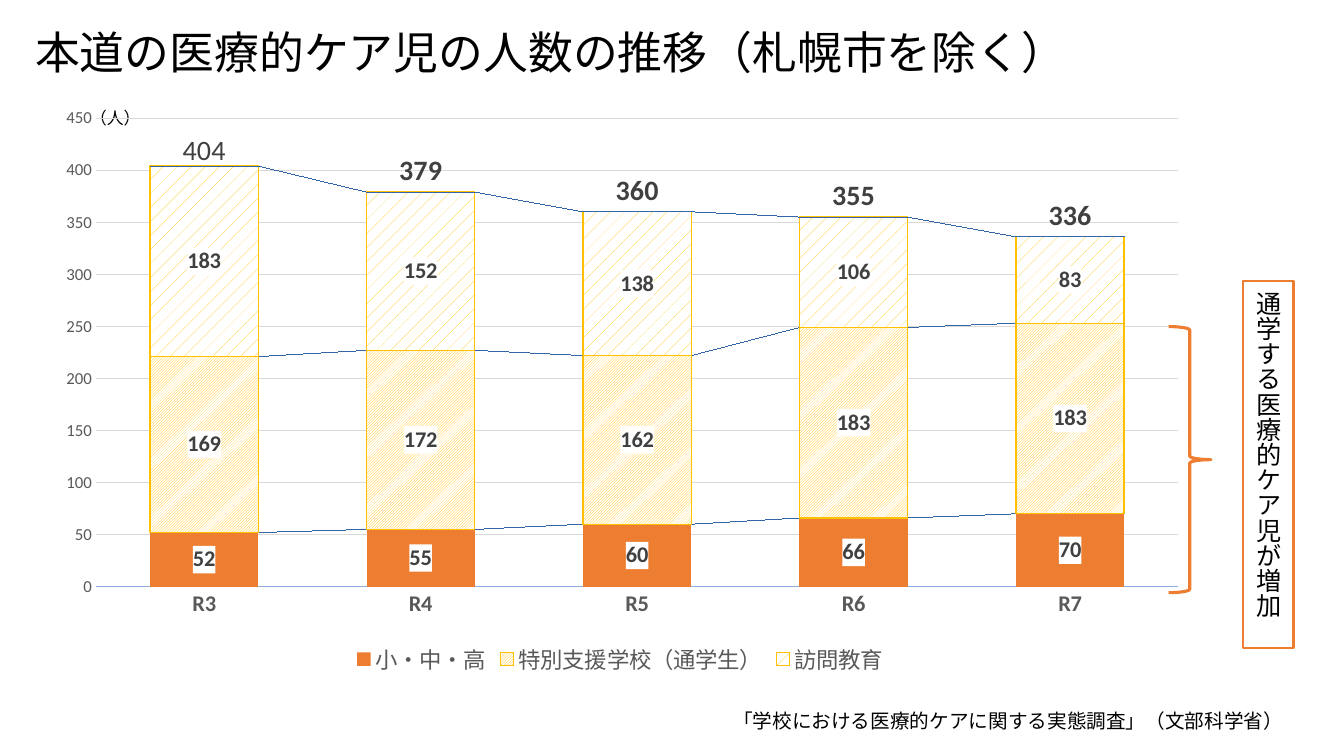
import pptx
import pptx.util
import pptx.chart.data
import pptx.dml.color
import pptx.enum.chart
import pptx.enum.dml
import pptx.enum.lang
import pptx.enum.shapes
import pptx.enum.text
import pptx.oxml
import pptx.oxml.ns

Inches = pptx.util.Inches
Pt = pptx.util.Pt
qn = pptx.oxml.ns.qn
Align = pptx.enum.text.PP_ALIGN
Anchor = pptx.enum.text.MSO_ANCHOR
Shape = pptx.enum.shapes.MSO_SHAPE
Place = pptx.enum.chart.XL_LABEL_POSITION
Hatch = pptx.enum.dml.MSO_PATTERN

CJK = "Noto Sans CJK JP"
LATIN = "Calibri"
ORANGE = "ED7D31"
GOLD = "FFC000"
WHITE = "FFFFFF"
YEARS = ["R3", "R4", "R5", "R6", "R7"]
COUNTS = [
    ("小・中・高", [52, 55, 60, 66, 70], None),
    ("特別支援学校（通学生）", [169, 172, 162, 183, 183], Hatch.DARK_UPWARD_DIAGONAL),
    ("訪問教育", [183, 152, 138, 106, 83], Hatch.PERCENT_5),
]
TOTALS = ("Series 4", [398, 379, 360, 355, 336])


def color(code):
    return pptx.dml.color.RGBColor.from_string(code)


def xml(tag, body=""):
    spaces = pptx.oxml.ns.nsdecls("c", "a")
    return pptx.oxml.parse_xml(f"<c:{tag} {spaces}>{body}</c:{tag}>")


def style(font, size, code, bold=False, name=LATIN):
    font.size = Pt(size)
    font.bold = bold
    font.name = name
    font.color.rgb = color(code)


def stroke(line, code, width):
    line.color.rgb = color(code)
    line.width = Pt(width)


def write(frame, text, size=14, name=LATIN, align=Align.LEFT,
          anchor=Anchor.TOP, space=None, wrap=True):
    frame.word_wrap = wrap
    frame.vertical_anchor = anchor
    para = frame.paragraphs[0]
    para.alignment = align
    if space:
        para.line_spacing = space
    run = para.add_run()
    run.text = text
    style(run.font, size, "000000", name=name)
    run.font.language_id = pptx.enum.lang.MSO_LANGUAGE_ID.JAPANESE
    if name == CJK:
        latin = run.font._element.find(qn("a:latin"))
        face = pptx.oxml.parse_xml(
            f'<a:ea {pptx.oxml.ns.nsdecls("a")} typeface="{CJK}"/>')
        latin.addnext(face)


def add_text(slide, box, text, **form):
    area = slide.shapes.add_textbox(*map(Inches, box))
    write(area.text_frame, text, **form)


def add_frame(slide, kind, box, width):
    shape = slide.shapes.add_shape(kind, *map(Inches, box))
    shape.shadow.inherit = False
    shape.fill.background()
    stroke(shape.line, ORANGE, width)
    return shape


def set_label(series, size, place):
    labels = series.data_labels
    labels.show_value = True
    labels.position = place
    style(labels.font, size, "404040", True)
    return labels


def style_bar(series, hatch):
    fill = series.format.fill
    if hatch is None:
        fill.solid()
        fill.fore_color.rgb = color(ORANGE)
    else:
        fill.patterned()
        fill.pattern = hatch
        fill.fore_color.rgb = color(GOLD)
        fill.back_color.rgb = color(WHITE)
        stroke(series.format.line, GOLD, 1)
    labels = set_label(series, 16, Place.CENTER)
    back = f'<a:solidFill><a:srgbClr val="{WHITE}"/></a:solidFill>'
    labels._element.find(qn("c:txPr")).addprevious(xml("spPr", back))


def split_total(chart):
    bars = chart._chartSpace.find(".//" + qn("c:barChart"))
    total = bars.findall(qn("c:ser"))[-1]
    for flag in total.findall(qn("c:invertIfNegative")):
        total.remove(flag)
    line = xml("lineChart", '<c:grouping val="standard"/><c:varyColors val="0"/>')
    line.append(total)
    line.append(xml("marker"))
    for axis in bars.findall(qn("c:axId")):
        tag = xml("axId")
        tag.set("val", axis.get("val"))
        line.append(tag)
    bars.addnext(line)
    links = ('<c:spPr><a:ln w="9525"><a:solidFill><a:srgbClr val="2F5597"/>'
             '</a:solidFill></a:ln></c:spPr>')
    bars.find(qn("c:axId")).addprevious(xml("serLines", links))


def style_total(series):
    series.smooth = False
    series.format.line.fill.background()
    series.marker.style = pptx.enum.chart.XL_MARKER_STYLE.NONE
    set_label(series, 20, Place.ABOVE)
    label = series.points[0].data_label
    run = label.text_frame.paragraphs[0].add_run()
    run.text = "404"
    style(run.font, 20, "404040")
    label.position = Place.ABOVE


def style_axes(chart):
    none = pptx.enum.chart.XL_TICK_MARK.NONE
    years, people = chart.category_axis, chart.value_axis
    for axis, size, bold in ((years, 16, True), (people, 12, False)):
        axis.major_tick_mark = axis.minor_tick_mark = none
        style(axis.tick_labels.font, size, "595959", bold)
    stroke(years.format.line, "8FAADC", 0.75)
    people.format.line.fill.background()
    people.minimum_scale, people.maximum_scale = 0, 450
    people.major_unit = 50
    stroke(people.major_gridlines.format.line, "D9D9D9", 0.75)


def set_plot(chart, box):
    area = chart._chartSpace.find(".//" + qn("c:plotArea"))
    for old in area.findall(qn("c:layout")):
        area.remove(old)
    body = '<c:layoutTarget val="inner"/><c:xMode val="edge"/><c:yMode val="edge"/>'
    body += "".join(f'<c:{key} val="{val}"/>' for key, val in zip("xywh", box))
    area.insert(0, xml("layout", f"<c:manualLayout>{body}</c:manualLayout>"))


def set_legend(chart):
    chart.has_legend = True
    legend = chart.legend
    legend.position = pptx.enum.chart.XL_LEGEND_POSITION.BOTTOM
    legend.include_in_layout = False
    style(legend.font, 16, "595959")
    hidden = xml("legendEntry", '<c:idx val="3"/><c:delete val="1"/>')
    entry = legend._element.find(qn("c:legendPos"))
    if entry is None:
        legend._element.insert(0, hidden)
    else:
        entry.addnext(hidden)


def add_chart(slide, box):
    data = pptx.chart.data.CategoryChartData()
    data.categories = YEARS
    for name, values, _ in COUNTS:
        data.add_series(name, values)
    data.add_series(*TOTALS)
    kind = pptx.enum.chart.XL_CHART_TYPE.COLUMN_STACKED
    chart = slide.shapes.add_chart(kind, *map(Inches, box), data).chart
    chart.has_title = False
    style(chart.font, 10, "000000")
    bars = chart.plots[0]
    bars.gap_width = bars.overlap = 100
    bars.vary_by_categories = False
    split_total(chart)
    for series, (_, _, hatch) in zip(chart.plots[0].series, COUNTS):
        style_bar(series, hatch)
    style_total(chart.plots[1].series[0])
    style_axes(chart)
    set_plot(chart, (0.04, 0.03, 0.95, 0.81))
    set_legend(chart)


def main():
    deck = pptx.Presentation()
    deck.slide_width, deck.slide_height = Inches(13.33), Inches(7.5)
    slide = deck.slides.add_slide(deck.slide_layouts[6])
    add_text(slide, (0.25, 0.09, 10.82, 0.91), "本道の医療的ケア児の人数の推移（札幌市を除く）",
             size=32, name=CJK, anchor=Anchor.MIDDLE, space=0.9)
    add_text(slide, (2.6, 6.98, 10.23, 0.34),
             "「学校における医療的ケアに関する実態調査」（文部科学省）", align=Align.RIGHT)
    add_text(slide, (0.58, 1.02, 1.13, 0.3), "（人）", size=12, align=Align.CENTER)
    add_chart(slide, (0.5, 1, 11.3, 5.74))
    add_frame(slide, Shape.RIGHT_BRACE, (11.59, 3.24, 0.42, 2.64), 2.25)
    note = add_frame(slide, Shape.RECTANGLE, (12.33, 2.79, 0.5, 3.64), 1.5)
    write(note.text_frame, "通学する医療的ケア児が増加", size=18, name=CJK,
          align=Align.CENTER, anchor=Anchor.MIDDLE)
    note.text_frame._txBody.bodyPr.set("vert", "eaVert")
    deck.save("out.pptx")


if __name__ == "__main__":
    main()
